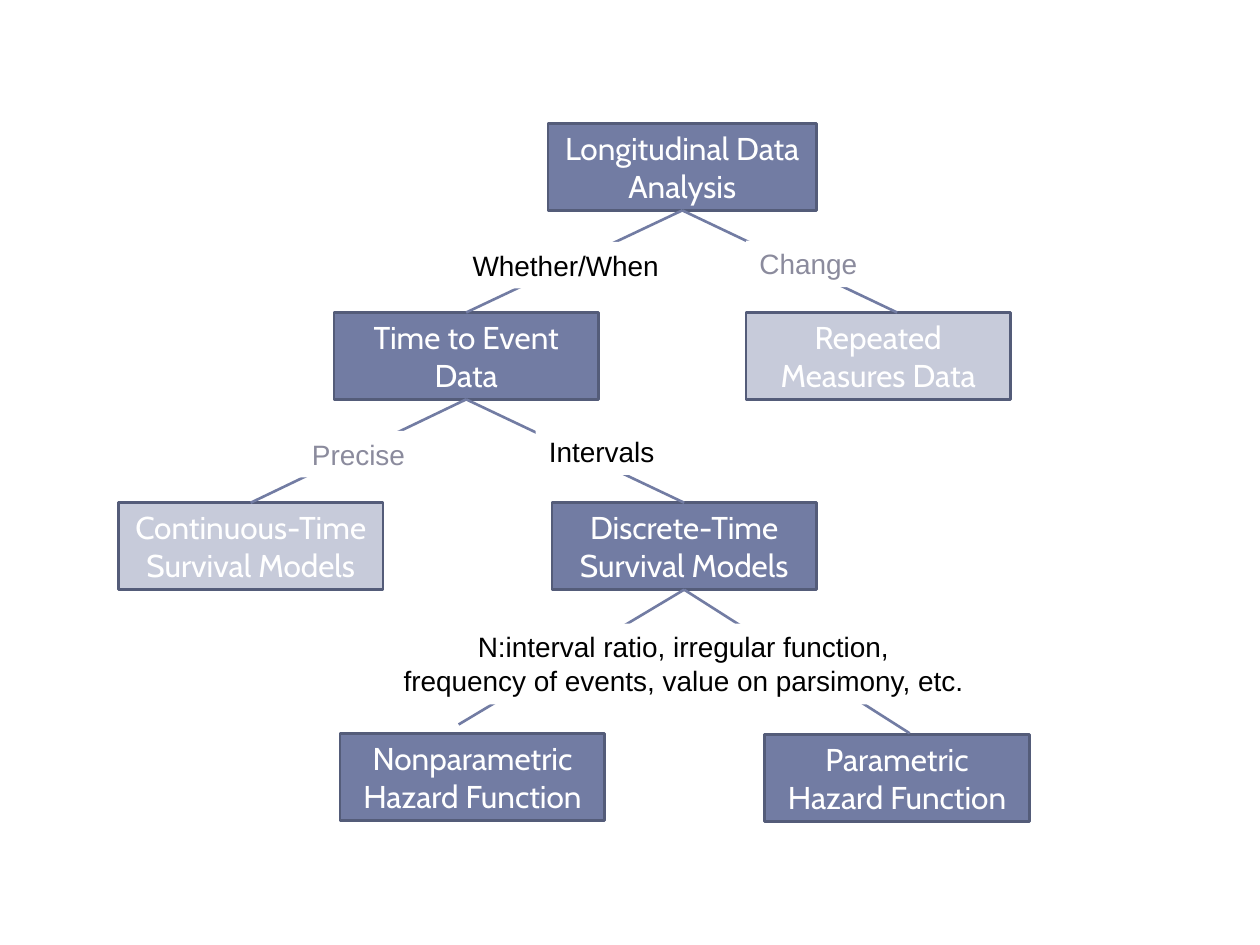
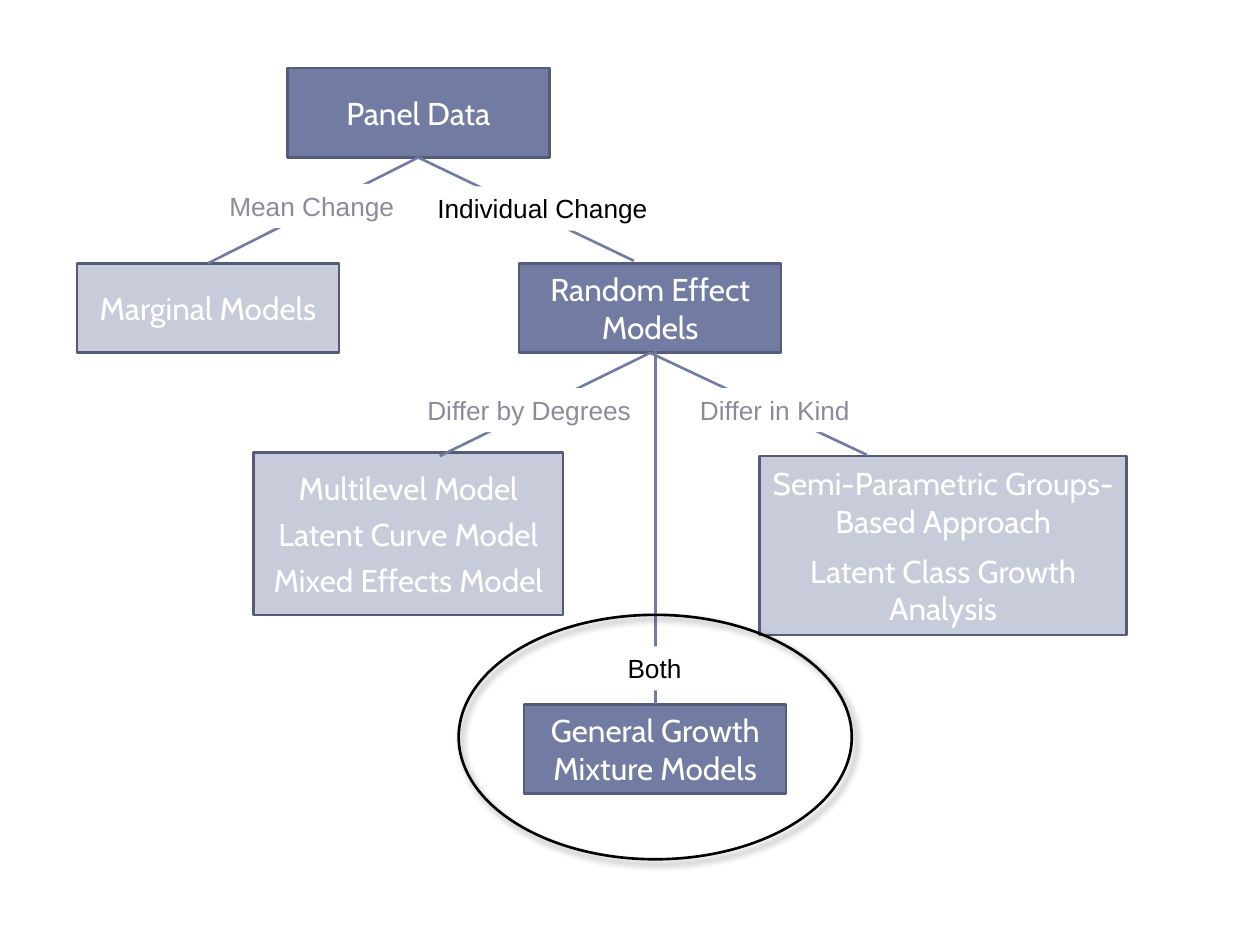
import dataclasses

import lxml.etree
import pptx
import pptx.dml.color
import pptx.enum.shapes
import pptx.enum.text
import pptx.oxml.ns
import pptx.util

COLS, ROWS = 100, 75
TOP, BOTTOM = 0, 2
SHAPES = pptx.enum.shapes.MSO_SHAPE
CENTER = pptx.enum.text.PP_ALIGN.CENTER
qn = pptx.oxml.ns.qn


@dataclasses.dataclass(frozen=True)
class Theme:
    paper: str = "FFFFFF"
    ink: str = "000000"
    active: str = "727CA3"
    faded: str = "C7CBDA"
    border: str = "545C79"
    muted: str = "8B8B9D"
    box_font: str = "Cabin"
    label_font: str = "Arial"
    box_size: float = 18
    line_width: float = 1.5


def rgb(value):
    return pptx.dml.color.RGBColor.from_string(value)


class TreeSlide:
    def __init__(self, prs, theme, box_size, label_size):
        self.theme = theme
        self.col = prs.slide_width / COLS
        self.row = prs.slide_height / ROWS
        self.box_size = box_size
        self.label_size = label_size
        self.slide = prs.slides.add_slide(prs.slide_layouts[6])
        fill = self.slide.background.fill
        fill.solid()
        fill.fore_color.rgb = rgb(theme.paper)

    def place(self, *lengths):
        units = (self.col, self.row) * 2
        return [round(n * unit) for n, unit in zip(lengths, units)]

    def outline(self, sp, color):
        sp.line.color.rgb = rgb(color)
        sp.line.width = pptx.util.Pt(self.theme.line_width)

    def set_text(self, tf, lines, font, size, color, gap=0):
        tf.text = "\n".join(lines)
        for i, p in enumerate(tf.paragraphs):
            p.alignment = CENTER
            p.font.name = font
            p.font.size = pptx.util.Pt(size)
            p.font.color.rgb = rgb(color)
            if i and gap:
                p.space_before = pptx.util.Pt(gap)

    def box(self, left, top, *lines, size=None, faded=False, gap=0):
        t = self.theme
        sp = self.slide.shapes.add_shape(
            SHAPES.RECTANGLE, *self.place(left, top, *(size or self.box_size)))
        sp.shadow.inherit = False
        sp.fill.solid()
        sp.fill.fore_color.rgb = rgb(t.faded if faded else t.active)
        self.outline(sp, t.border)
        tf = sp.text_frame
        tf.word_wrap = True
        tf.vertical_anchor = pptx.enum.text.MSO_ANCHOR.MIDDLE
        self.set_text(tf, lines, t.box_font, t.box_size, t.paper, gap)
        return sp

    def label(self, left, top, width, height, *lines, muted=False, wrap=False):
        t = self.theme
        sp = self.slide.shapes.add_textbox(*self.place(left, top, width, height))
        sp.fill.solid()
        sp.fill.fore_color.rgb = rgb(t.paper)
        tf = sp.text_frame
        tf.word_wrap = wrap
        tf.auto_size = pptx.enum.text.MSO_AUTO_SIZE.SHAPE_TO_FIT_TEXT
        self.set_text(tf, lines, t.label_font, self.label_size,
                      t.muted if muted else t.ink)

    def branch(self, start, end):
        points = [self.place(*e) if isinstance(e, tuple) else (0, 0)
                  for e in (start, end)]
        cx = self.slide.shapes.add_connector(
            pptx.enum.shapes.MSO_CONNECTOR.STRAIGHT, *points[0], *points[1])
        if not isinstance(start, tuple):
            cx.begin_connect(start, BOTTOM)
        if not isinstance(end, tuple):
            cx.end_connect(end, TOP)
        self.outline(cx, self.theme.active)
        lxml.etree.SubElement(cx._element.spPr, qn("a:effectLst"))

    def ring(self, *area):
        sp = self.slide.shapes.add_shape(SHAPES.OVAL, *self.place(*area))
        sp.fill.background()
        self.outline(sp, self.theme.ink)
        sp.shadow.inherit = False
        effects = sp._element.spPr.find(qn("a:effectLst"))
        shadow = lxml.etree.SubElement(
            effects, qn("a:outerShdw"), blurRad=str(pptx.util.Pt(4)),
            dist=str(pptx.util.Pt(3)), dir=str(45 * 60000), rotWithShape="0")
        color = lxml.etree.SubElement(shadow, qn("a:srgbClr"), val=self.theme.ink)
        lxml.etree.SubElement(color, qn("a:alpha"), val="40000")


def longitudinal_slide(prs, theme):
    s = TreeSlide(prs, theme, box_size=(21, 6.9), label_size=16)
    root = s.box(43.5, 9.8, "Longitudinal Data Analysis", size=(21.3, 6.9))
    event = s.box(26.5, 24.8, "Time to Event Data")
    s.box(59.2, 24.8, "Repeated Measures Data", faded=True)
    continuous = s.box(9.4, 39.9, "Continuous-Time Survival Models", faded=True)
    discrete = s.box(43.8, 39.9, "Discrete-Time Survival Models")
    s.box(27, 58.2, "Nonparametric Hazard Function")
    s.box(60.7, 58.3, "Parametric Hazard Function")

    for start, end in ((root, event), (root, (71.2, 24.8)),
                       (event, continuous), (event, discrete),
                       (discrete, (36.4, 57.5)), (discrete, (72.2, 58.2))):
        s.branch(start, end)

    s.label(36.4, 19.2, 17, 3.7, "Whether/When")
    s.label(59.2, 19.1, 9.9, 3.7, "Change", muted=True)
    s.label(21.9, 34.2, 13.1, 3.7, "Precise", muted=True, wrap=True)
    s.label(42.5, 34, 10.5, 3.7, "Intervals")
    s.label(29.8, 49.5, 48.9, 6.4, "N:interval ratio, irregular function,",
            "frequency of events, value on parsimony, etc.", wrap=True)


def panel_slide(prs, theme):
    s = TreeSlide(prs, theme, box_size=(20.8, 7.1), label_size=15)
    panel = s.box(22.8, 5.4, "Panel Data")
    marginal = s.box(6.1, 20.9, "Marginal Models", faded=True)
    effects = s.box(41.2, 20.9, "Random Effect Models")
    s.box(20.1, 35.9, "Multilevel Model", "Latent Curve Model",
          "Mixed Effects Model", size=(24.6, 12.9), faded=True, gap=4.6)
    s.box(60.3, 36.2, "Semi-Parametric Groups-Based Approach",
          "Latent Class Growth Analysis", size=(29.1, 14.2), faded=True, gap=6.9)
    mixture = s.box(41.6, 55.9, "General Growth Mixture Models")

    for start, end in ((panel, marginal), (panel, (50.3, 20.7)),
                       (effects, (34.9, 36.2)), (effects, (68.8, 36.1)),
                       ((52, 27.8), mixture)):
        s.branch(start, end)

    s.label(17.1, 14.6, 15.3, 3.5, "Mean Change", muted=True)
    s.label(33.6, 14.8, 18.9, 3.5, "Individual Change")
    s.label(32.8, 30.8, 18.4, 3.5, "Differ by Degrees", muted=True)
    s.label(54.5, 30.8, 14, 3.5, "Differ in Kind", muted=True)
    s.label(48.8, 51.3, 6.3, 3.5, "Both")
    s.ring(36.4, 48.8, 31.2, 19.4)


def main():
    prs = pptx.Presentation()
    prs.slide_width = pptx.util.Inches(10)
    prs.slide_height = pptx.util.Inches(7.5)
    theme = Theme()
    longitudinal_slide(prs, theme)
    panel_slide(prs, theme)
    prs.save("out.pptx")


if __name__ == "__main__":
    main()
